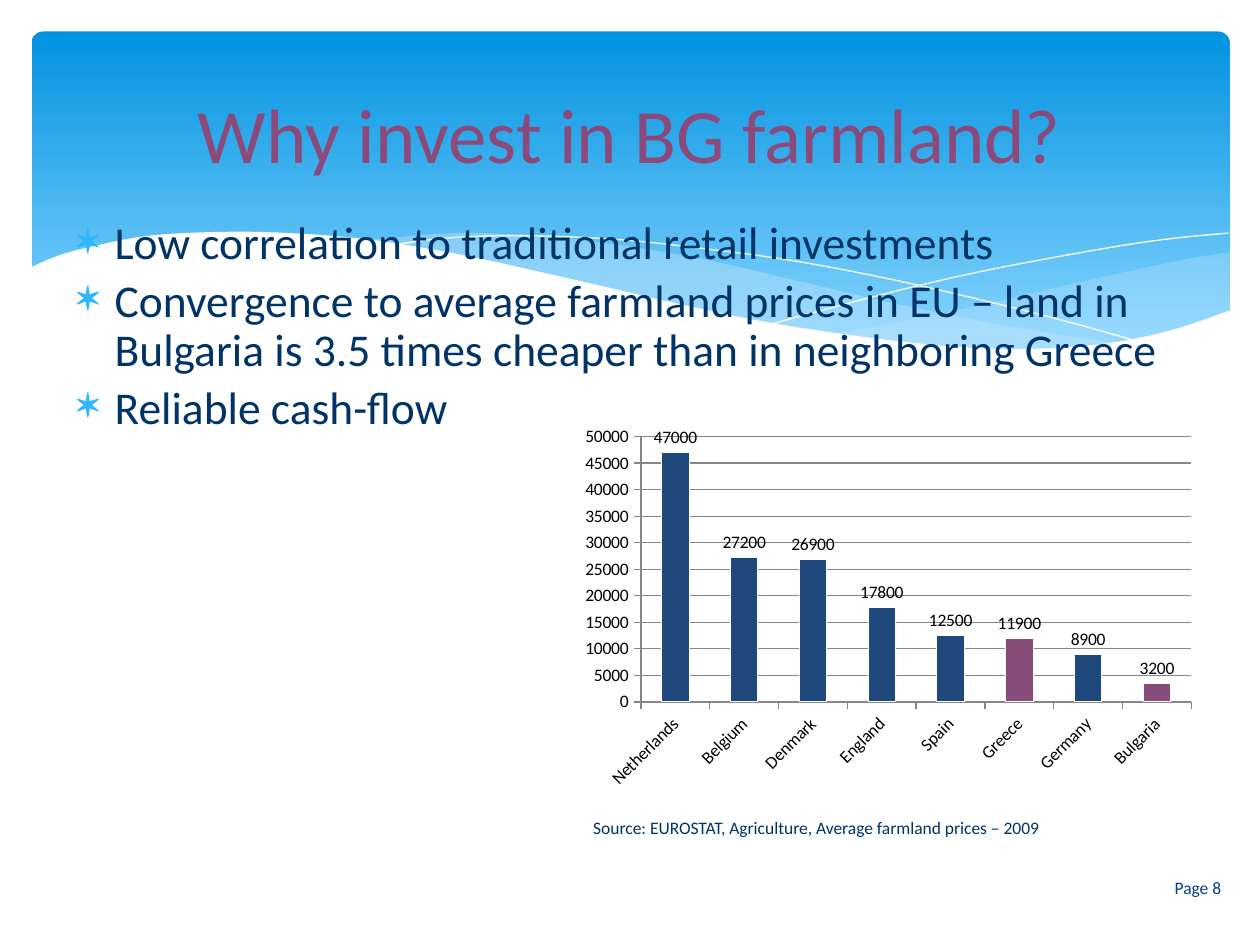
import pptx
import pptx.chart.data
import pptx.dml.color
import pptx.enum.chart
import pptx.enum.shapes
import pptx.enum.text
import pptx.oxml
import pptx.oxml.ns
import pptx.util
from lxml import etree
from pptx.util import Inches, Pt

FONT = "Calibri"
COLORS = {
    "sky_top": "0293E0", "sky_bottom": "83D3FE", "wave": "C6E7FC", "white": "FFFFFF",
    "title": "8C4A7A", "text": "003366", "bullet": "31B6FD", "page": "073E87",
    "bar": "1F497D", "highlight": "884C78", "axis": "868686", "label": "000000",
}
TITLE = "Why invest in BG farmland?"
BULLETS = [
    "Low correlation to traditional retail investments",
    "Convergence to average farmland prices in EU – land in Bulgaria is 3.5 times "
    "cheaper than in neighboring Greece",
    "Reliable cash-flow",
]
SOURCE = "Source: EUROSTAT, Agriculture, Average farmland prices – 2009"
PAGE = "Page 8"
PRICES = {
    "Netherlands": 47000, "Belgium": 27200, "Denmark": 26900, "England": 17800,
    "Spain": 12500, "Greece": 11900, "Germany": 8900, "Bulgaria": 3400,
}
HIGHLIGHTED = ("Greece", "Bulgaria")
CUSTOM_LABELS = {"Bulgaria": "3200"}
PLOT_AREA = {"x": 0.109, "y": 0.107, "w": 0.855, "h": 0.652}

# Each wave is a list of edges; every edge is a smooth curve through its points.
FILLED_WAVES = [
    (29, [
        [(9.76, 2), (9.35, 2.07), (8.61, 2.23), (7.79, 2.42), (7.06, 2.57), (6.61, 2.65)],
        [(6.61, 2.65), (7.05, 2.71), (7.57, 2.76), (8.14, 2.78), (8.72, 2.74),
         (9.21, 2.65), (9.76, 2.47)],
    ]),
    (40, [
        [(8.93, 2.73), (8.37, 2.65), (7.75, 2.54), (7.06, 2.4), (6.29, 2.22), (5.69, 2.08),
         (5.14, 1.98), (4.65, 1.91), (4.2, 1.87), (3.61, 1.85), (2.86, 1.91)],
        [(2.86, 1.91), (3.42, 1.99), (4.04, 2.11), (4.91, 2.32), (5.66, 2.48), (6.34, 2.61),
         (6.95, 2.7), (7.61, 2.77), (8.18, 2.78), (8.93, 2.73)],
    ]),
]
LINE_WAVES = [
    [(3.09, 1.95), (3.53, 1.89), (4.16, 1.87), (4.89, 1.9), (5.56, 1.97), (6.36, 2.08),
     (7.27, 2.26), (8.31, 2.51), (9.07, 2.72)],
    [(6.13, 2.57), (6.95, 2.35), (7.76, 2.16), (8.66, 1.99), (9.24, 1.9), (9.75, 1.85)],
]
WHITE_WAVE = (100, [
    [(9.77, 2.46), (9.3, 2.62), (8.75, 2.73), (8.09, 2.77), (7.44, 2.74), (6.68, 2.65),
     (5.79, 2.5), (4.47, 2.2), (3.65, 2.02), (2.92, 1.9), (2.3, 1.85), (1.77, 1.84),
     (1.19, 1.87), (0.76, 1.95), (0.46, 2.03), (0.23, 2.13)],
    [(0.23, 3.29), (9.77, 3.29)],
])


def rgb(name):
    return pptx.dml.color.RGBColor.from_string(COLORS[name])


def smooth(points, steps=5):
    """Return points along a Catmull-Rom curve through the given points."""
    padded = [points[0], *points, points[-1]]
    curve = [points[0]]
    for before, start, end, after in zip(padded, padded[1:], padded[2:], padded[3:]):
        for step in range(1, steps + 1):
            t = step / steps
            curve.append(tuple(
                (2 * b + (c - a) * t + (2 * a - 5 * b + 4 * c - d) * t ** 2
                 + (3 * b - a - 3 * c + d) * t ** 3) / 2
                for a, b, c, d in zip(before, start, end, after)))
    return curve


def add_wave(slide, edges, closed):
    points = [(Inches(x), Inches(y)) for edge in edges for x, y in smooth(edge)]
    builder = slide.shapes.build_freeform(*points[0])
    builder.add_line_segments(points[1:], close=closed)
    shape = builder.convert_to_shape()
    shape.shadow.inherit = False
    return shape


def add_filled_wave(slide, opacity, edges, color):
    shape = add_wave(slide, edges, True)
    shape.line.fill.background()
    shape.fill.solid()
    shape.fill.fore_color.rgb = rgb(color)
    if opacity < 100:
        color_element = shape._element.spPr.find(".//" + pptx.oxml.ns.qn("a:srgbClr"))
        etree.SubElement(color_element, pptx.oxml.ns.qn("a:alpha"), val=str(opacity * 1000))


def add_backdrop(slide):
    sky = slide.shapes.add_shape(pptx.enum.shapes.MSO_SHAPE.ROUNDED_RECTANGLE,
                                 Inches(0.25), Inches(0.25), Inches(9.51), Inches(2.7))
    sky.adjustments[0] = 0.034
    sky.shadow.inherit = False
    sky.line.fill.background()
    sky.fill.gradient()
    sky.fill.gradient_angle = 270
    for stop, position, color in zip(sky.fill.gradient_stops, (0, 0.9),
                                     ("sky_top", "sky_bottom")):
        stop.position = position
        stop.color.rgb = rgb(color)
    for opacity, edges in FILLED_WAVES:
        add_filled_wave(slide, opacity, edges, "wave")
    for edge in LINE_WAVES:
        shape = add_wave(slide, [edge], False)
        shape.fill.background()
        shape.line.color.rgb = rgb("white")
        shape.line.width = Pt(0)
    add_filled_wave(slide, *WHITE_WAVE, "white")


def place(shape, left, top, width, height):
    shape.left, shape.top = Inches(left), Inches(top)
    shape.width, shape.height = Inches(width), Inches(height)


def style_font(font, size, color):
    font.name, font.size, font.bold = FONT, Pt(size), False
    font.color.rgb = rgb(color)


def write(paragraph, text, size, color, alignment):
    paragraph.alignment = alignment
    run = paragraph.add_run()
    run.text = text
    style_font(run.font, size, color)


def set_bullet(paragraph):
    properties = paragraph._p.get_or_add_pPr()
    properties.set("marL", str(Inches(0.3)))
    properties.set("indent", str(-Inches(0.3)))
    color = etree.SubElement(properties, pptx.oxml.ns.qn("a:buClr"))
    etree.SubElement(color, pptx.oxml.ns.qn("a:srgbClr"), val=COLORS["bullet"])
    etree.SubElement(properties, pptx.oxml.ns.qn("a:buFont"), typeface="Symbol", charset="2")
    etree.SubElement(properties, pptx.oxml.ns.qn("a:buChar"), char="*")


def fill_placeholders(slide):
    align = pptx.enum.text.PP_ALIGN
    title, body = slide.shapes.title, slide.placeholders[1]
    place(title, 0.5, 0.37, 9, 1.37)
    place(body, 0.51, 1.7, 9.49, 2.28)
    for shape in (title, body):
        shape.text_frame.auto_size = pptx.enum.text.MSO_AUTO_SIZE.NONE
        slide.shapes._spTree.append(shape._element)  # bring in front of the backdrop
    title.text_frame.vertical_anchor = pptx.enum.text.MSO_ANCHOR.MIDDLE
    write(title.text_frame.paragraphs[0], TITLE, 44, "title", align.CENTER)
    for index, text in enumerate(BULLETS):
        frame = body.text_frame
        paragraph = frame.add_paragraph() if index else frame.paragraphs[0]
        paragraph.line_spacing = 0.9
        paragraph.space_before = Pt(5)
        set_bullet(paragraph)
        write(paragraph, text, 26, "text", align.LEFT)


def add_note(slide, box, text, color, alignment, wrap):
    shape = slide.shapes.add_textbox(*(Inches(value) for value in box))
    shape.text_frame.word_wrap = wrap
    shape.text_frame.vertical_anchor = pptx.enum.text.MSO_ANCHOR.MIDDLE
    write(shape.text_frame.paragraphs[0], text, 10, color, alignment)


def paint_bar(bar_format, color):
    bar_format.fill.solid()
    bar_format.fill.fore_color.rgb = rgb(color)
    bar_format.line.color.rgb = rgb("white")


def add_price_chart(slide):
    enums = pptx.enum.chart
    data = pptx.chart.data.CategoryChartData()
    data.categories = list(PRICES)
    data.add_series("Series 1", list(PRICES.values()))
    chart = slide.shapes.add_chart(enums.XL_CHART_TYPE.COLUMN_CLUSTERED, Inches(4.53),
                                   Inches(3.12), Inches(5.11), Inches(3.23), data).chart
    chart.has_legend = chart.has_title = False
    style_font(chart.font, 10, "label")
    for axis in (chart.category_axis, chart.value_axis):
        axis.major_tick_mark = enums.XL_TICK_MARK.OUTSIDE
        axis.format.line.color.rgb = rgb("axis")
        style_font(axis.tick_labels.font, 10, "label")
    chart.category_axis._element.find(".//" + pptx.oxml.ns.qn("a:bodyPr")).set("rot", "-2700000")
    value_axis = chart.value_axis
    value_axis.minimum_scale, value_axis.maximum_scale, value_axis.major_unit = 0, 50000, 5000
    value_axis.major_gridlines.format.line.color.rgb = rgb("axis")

    plot = chart.plots[0]
    plot.gap_width, plot.vary_by_categories = 150, False
    series = plot.series[0]
    paint_bar(series.format, "bar")
    labels = series.data_labels
    labels.show_value = True
    labels.position = enums.XL_LABEL_POSITION.OUTSIDE_END
    style_font(labels.font, 10, "label")
    for index, country in enumerate(PRICES):
        if country in HIGHLIGHTED:
            paint_bar(series.points[index].format, "highlight")
        if country in CUSTOM_LABELS:
            label = series.points[index].data_label
            write(label.text_frame.paragraphs[0], CUSTOM_LABELS[country], 10, "label", None)
            label.position = enums.XL_LABEL_POSITION.OUTSIDE_END

    plot_area = chart._chartSpace.chart.plotArea
    for old_layout in plot_area.findall(pptx.oxml.ns.qn("c:layout")):
        plot_area.remove(old_layout)
    layout = etree.Element(pptx.oxml.ns.qn("c:layout"))
    manual = etree.SubElement(layout, pptx.oxml.ns.qn("c:manualLayout"))
    settings = {"layoutTarget": "inner", "xMode": "edge", "yMode": "edge", **PLOT_AREA}
    for name, value in settings.items():
        etree.SubElement(manual, pptx.oxml.ns.qn("c:" + name), val=str(value))
    plot_area.insert(0, layout)


def main():
    presentation = pptx.Presentation()
    presentation.slide_width, presentation.slide_height = Inches(10), Inches(7.5)
    slide = presentation.slides.add_slide(presentation.slide_layouts[1])
    align = pptx.enum.text.PP_ALIGN
    add_backdrop(slide)
    fill_placeholders(slide)
    add_note(slide, (5.65, 6.84, 4.14, 0.4), PAGE, "page", align.RIGHT, True)
    add_price_chart(slide)
    add_note(slide, (4.61, 6.43, 4.28, 0.27), SOURCE, "text", align.LEFT, False)
    presentation.save("out.pptx")


if __name__ == "__main__":
    main()
